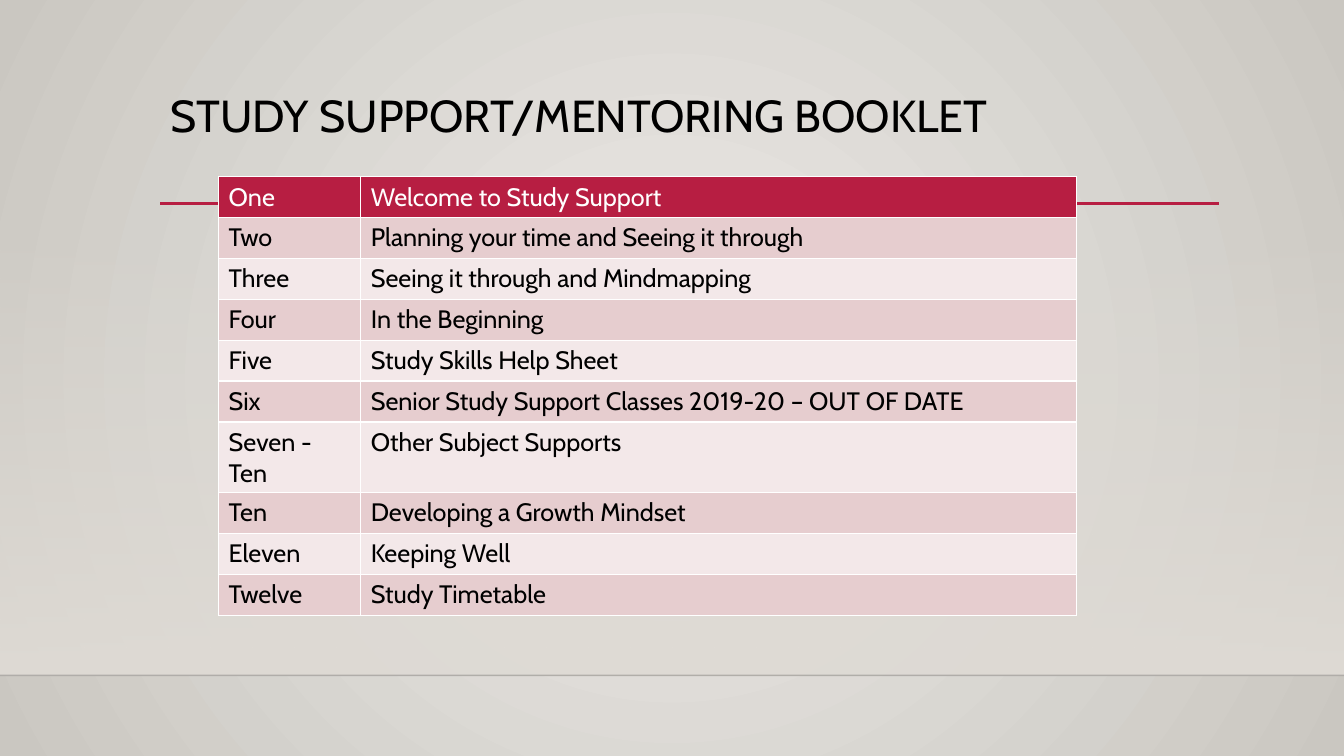
import dataclasses

import pptx
import pptx.dml.color
import pptx.enum.shapes
import pptx.enum.text
import pptx.oxml
import pptx.oxml.ns
import pptx.util

Pt = pptx.util.Pt
qn = pptx.oxml.ns.qn


@dataclasses.dataclass(frozen=True)
class Theme:
    font: str = "Cabin"
    title_size: float = 32
    table_size: float = 18
    ink: str = "000000"
    white: str = "FFFFFF"
    accent: str = "B71E42"
    band_dark: str = "E6CDCF"
    band_light: str = "F3E8E9"
    background_centre: str = "ECEAE7"
    background_edge: str = "CAC7C1"
    wall: str = "DFDBD5"
    floor_line: str = "000001"


THEME = Theme()
SLIDE_WIDTH, SLIDE_HEIGHT = 960, 540
FLOOR_TOP = 482.4
ROW_HEIGHT = 29.2
COLUMN_WIDTHS = (101.5, 511.2)
BOOKLET = (
    ("One", "Welcome to Study Support"),
    ("Two", "Planning your time and Seeing it through"),
    ("Three", "Seeing it through and Mindmapping"),
    ("Four", "In the Beginning"),
    ("Five", "Study Skills Help Sheet"),
    ("Six", "Senior Study Support Classes 2019-20 – OUT OF DATE"),
    ("Seven - Ten", "Other Subject Supports"),
    ("Ten", "Developing a Growth Mindset"),
    ("Eleven", "Keeping Well"),
    ("Twelve", "Study Timetable"),
)


def rgb(value):
    return pptx.dml.color.RGBColor.from_string(value)


def add_element(parent, tag, **attributes):
    element = parent.makeelement(qn(tag), attributes)
    parent.append(element)
    return element


def set_alpha(colour_element, percent):
    add_element(colour_element, "a:alpha", val=str(percent * 1000))


def set_gradient(fill, start, end):
    fill.gradient()
    for stop, colour in zip(fill.gradient_stops, (start, end)):
        stop.color.rgb = rgb(colour)


def paint_background(slide):
    set_gradient(slide.background.fill, THEME.background_centre, THEME.background_edge)
    gradient = next(slide.element.iter(qn("a:gradFill")))
    gradient.remove(gradient.find(qn("a:lin")))
    circle = add_element(gradient, "a:path", path="circle")
    add_element(circle, "a:fillToRect", l="50000", t="50000", r="50000", b="50000")


def add_wall(slide, top, bottom):
    shape = slide.shapes.add_shape(
        pptx.enum.shapes.MSO_SHAPE.RECTANGLE, 0, Pt(top), Pt(SLIDE_WIDTH), Pt(bottom - top)
    )
    shape.shadow.inherit = False
    shape.line.fill.background()
    set_gradient(shape.fill, THEME.wall, THEME.wall)
    shape.fill.gradient_angle = 270
    set_alpha(next(shape.element.iter(qn("a:srgbClr"))), 0)


def add_rule(slide, left, right, top, colour, width, opacity=100):
    connector = slide.shapes.add_connector(
        pptx.enum.shapes.MSO_CONNECTOR.STRAIGHT, Pt(left), Pt(top), Pt(right), Pt(top)
    )
    connector.line.color.rgb = rgb(colour)
    connector.line.width = Pt(width)
    if opacity < 100:
        set_alpha(next(connector.element.iter(qn("a:srgbClr"))), opacity)
    add_element(connector.element.spPr, "a:effectLst")


def add_text(paragraph, text, size, colour):
    run = paragraph.add_run()
    run.text = text
    run.font.name = THEME.font
    run.font.size = Pt(size)
    run.font.bold = False
    run.font.color.rgb = rgb(colour)


def add_title(slide, text):
    shape = slide.shapes.add_textbox(Pt(114.5), Pt(63.4), Pt(756), Pt(82.8))
    frame = shape.text_frame
    frame.word_wrap = True
    frame.vertical_anchor = pptx.enum.text.MSO_ANCHOR.TOP
    paragraph = frame.paragraphs[0]
    paragraph.line_spacing = 0.9
    add_text(paragraph, text, THEME.title_size, THEME.ink)


def set_borders(cell, colour, width):
    properties = cell._tc.get_or_add_tcPr()
    for side in ("a:lnL", "a:lnR", "a:lnT", "a:lnB"):
        line = add_element(properties, side, w=str(Pt(width)))
        add_element(add_element(line, "a:solidFill"), "a:srgbClr", val=colour)


def row_colours(index):
    if index == 0:
        return THEME.accent, THEME.white
    return (THEME.band_dark if index % 2 else THEME.band_light), THEME.ink


def add_booklet_table(slide, rows):
    table = slide.shapes.add_table(
        len(rows), len(COLUMN_WIDTHS), Pt(156.2), Pt(126.2),
        Pt(sum(COLUMN_WIDTHS)), Pt(ROW_HEIGHT * len(rows)),
    ).table
    for column, width in zip(table.columns, COLUMN_WIDTHS):
        column.width = Pt(width)
    for index, texts in enumerate(rows):
        table.rows[index].height = Pt(ROW_HEIGHT)
        fill, ink = row_colours(index)
        for cell, text in zip(table.rows[index].cells, texts):
            set_borders(cell, THEME.white, 1)
            cell.fill.solid()
            cell.fill.fore_color.rgb = rgb(fill)
            add_text(cell.text_frame.paragraphs[0], text, THEME.table_size, ink)


def main():
    presentation = pptx.Presentation()
    presentation.slide_width = Pt(SLIDE_WIDTH)
    presentation.slide_height = Pt(SLIDE_HEIGHT)
    slide = presentation.slides.add_slide(presentation.slide_layouts[6])
    paint_background(slide)
    add_wall(slide, 159, FLOOR_TOP)
    add_rule(slide, 0, SLIDE_WIDTH, FLOOR_TOP, THEME.floor_line, 1, opacity=20)
    add_rule(slide, 114.5, 871, 145.4, THEME.accent, 2.5)
    add_title(slide, "STUDY SUPPORT/MENTORING BOOKLET")
    add_booklet_table(slide, BOOKLET)
    presentation.save("out.pptx")


if __name__ == "__main__":
    main()
